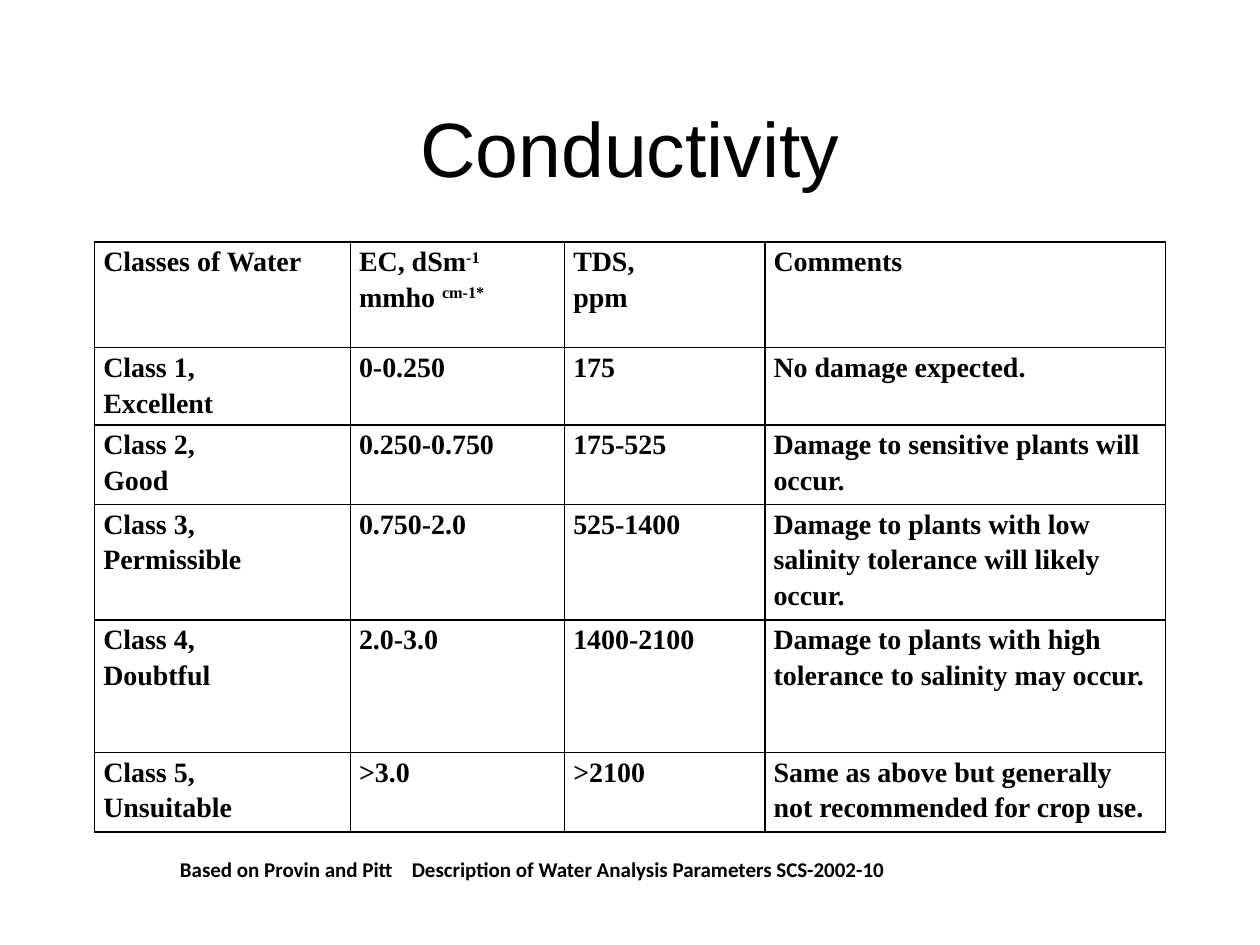
from dataclasses import dataclass

from lxml import etree
from pptx import Presentation
from pptx import util as u
from pptx.dml.color import RGBColor
from pptx.enum import text
from pptx.oxml import ns


@dataclass(frozen=True)
class Theme:
    ink: str = "000000"
    paper: str = "FFFFFF"
    head: tuple = ("Arial", 44, False)
    body: tuple = ("Times New Roman", 16, True)
    note: tuple = ("Calibri", 12, True)
    rule: float = 1
    lead: float = 1.15
    inset: float = 0.07


class Deck:
    def __init__(self, theme, wide, high):
        self.theme = theme
        self.prs = Presentation()
        self.prs.slide_width = u.Inches(wide)
        self.prs.slide_height = u.Inches(high)
        self.slide = self.prs.slides.add_slide(self.prs.slide_layouts[6])
        fill = self.slide.background.fill
        fill.solid()
        fill.fore_color.rgb = RGBColor.from_string(theme.paper)

    def run(self, para, words, style, base=0):
        run = para.add_run()
        run.text = words
        font = run.font
        font.name, size, font.bold = style
        font.size = u.Pt(size)
        font.color.rgb = RGBColor.from_string(self.theme.ink)
        if base:
            font._element.set("baseline", str(base * 1000))

    def label(self, box, words, style, align, anchor, tab=None):
        shape = self.slide.shapes.add_textbox(*map(u.Inches, box))
        frame = shape.text_frame
        frame.word_wrap = True
        frame.vertical_anchor = anchor
        para = frame.paragraphs[0]
        para.alignment = align
        if tab:
            stops = etree.SubElement(para._p.get_or_add_pPr(), ns.qn("a:tabLst"))
            etree.SubElement(stops, ns.qn("a:tab"), pos=str(u.Inches(tab)), algn="l")
        self.run(para, words, style)
        return frame

    def border(self, cell):
        props = cell._tc.get_or_add_tcPr()
        for spot, side in enumerate(("lnL", "lnR", "lnT", "lnB")):
            line = etree.Element(ns.qn("a:" + side), w=str(u.Pt(self.theme.rule)))
            fill = etree.SubElement(line, ns.qn("a:solidFill"))
            etree.SubElement(fill, ns.qn("a:srgbClr"), val=self.theme.ink)
            props.insert(spot, line)

    def cell(self, cell, lines):
        cell.margin_left = cell.margin_right = u.Inches(self.theme.inset)
        cell.margin_top = cell.margin_bottom = 0
        cell.fill.background()
        self.border(cell)
        frame = cell.text_frame
        for num, line in enumerate(lines):
            para = frame.add_paragraph() if num else frame.paragraphs[0]
            para.line_spacing = self.theme.lead
            words, *power = line.split("^")
            self.run(para, words, self.theme.body)
            for part in power:
                self.run(para, part, self.theme.body, 30)

    def table(self, left, top, cols, rows, data):
        box = map(u.Inches, (left, top, sum(cols), sum(rows)))
        grid = self.slide.shapes.add_table(len(rows), len(cols), *box).table
        grid.first_row = grid.horz_banding = False
        for col, width in zip(grid.columns, cols):
            col.width = u.Inches(width)
        for row, height, items in zip(grid.rows, rows, data):
            row.height = u.Inches(height)
            for cell, item in zip(row.cells, items):
                self.cell(cell, item.split("\n"))


DATA = [
    ("Classes of Water", "EC, dSm^-1\nmmho ^cm-1*", "TDS,\nppm", "Comments"),
    ("Class 1,\nExcellent", "0-0.250", "175", "No damage expected."),
    ("Class 2,\nGood", "0.250-0.750", "175-525",
     "Damage to sensitive plants will occur."),
    ("Class 3,\nPermissible", "0.750-2.0", "525-1400",
     "Damage to plants with low salinity tolerance will likely occur."),
    ("Class 4,\nDoubtful", "2.0-3.0", "1400-2100",
     "Damage to plants with high tolerance to salinity may occur."),
    ("Class 5,\nUnsuitable", ">3.0", ">2100",
     "Same as above but generally not recommended for crop use."),
]


def main():
    theme = Theme()
    deck = Deck(theme, 10, 7.5)
    deck.label((0.75, 0.58, 8.5, 1.17), "Conductivity", theme.head,
               text.PP_ALIGN.CENTER, text.MSO_ANCHOR.MIDDLE)
    deck.table(0.75, 1.92, (2.03, 1.7, 1.59, 3.18),
               (0.84, 0.61, 0.63, 0.84, 1.05, 0.63), DATA)
    note = deck.label(
        (1.33, 6.75, 7, 0.3),
        "Based on Provin and Pitt\tDescription of Water Analysis Parameters SCS-2002-10",
        theme.note, text.PP_ALIGN.LEFT, text.MSO_ANCHOR.TOP, 1.84)
    note.auto_size = text.MSO_AUTO_SIZE.SHAPE_TO_FIT_TEXT
    deck.prs.save("out.pptx")


if __name__ == "__main__":
    main()
